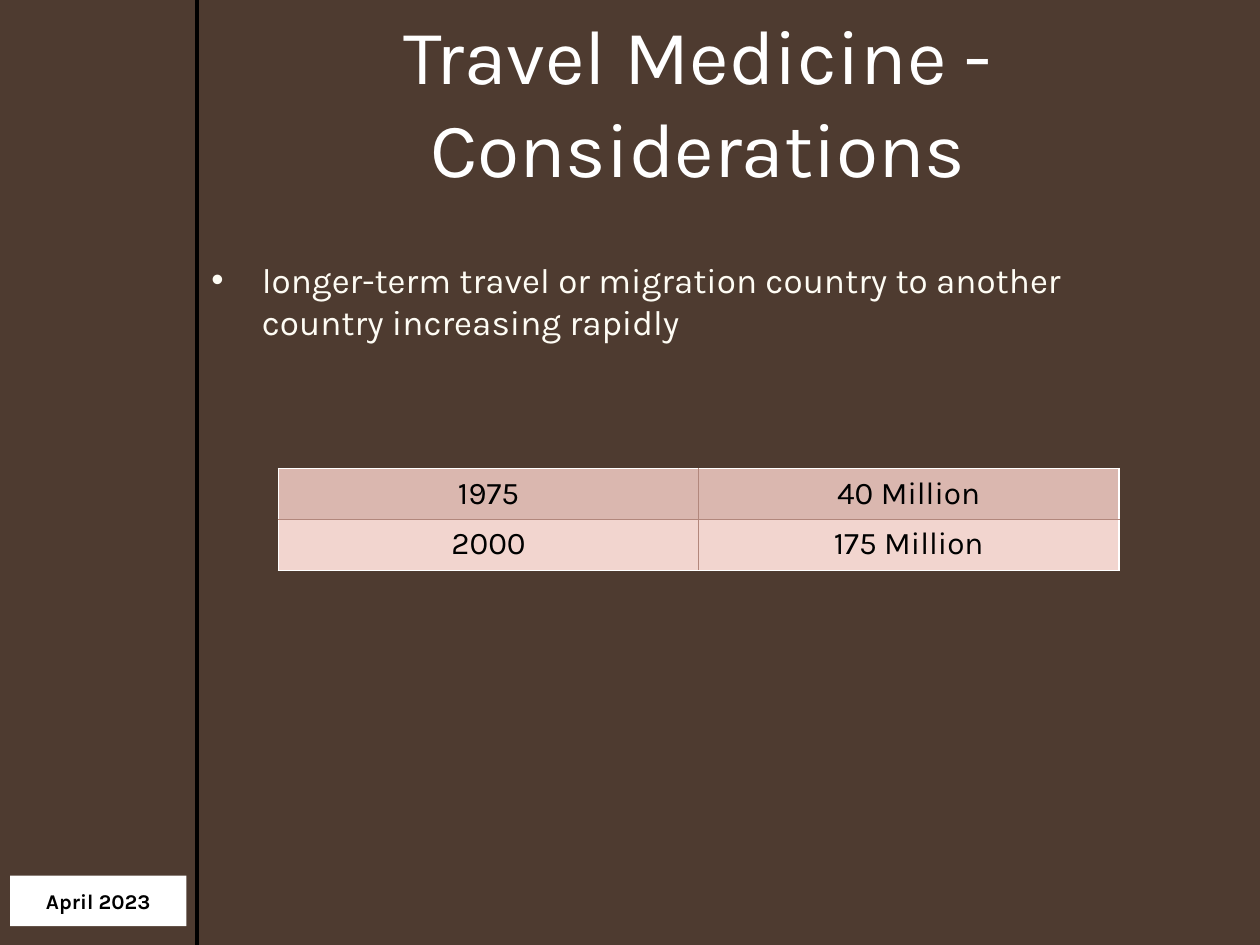
from lxml.etree import SubElement
from pptx import Presentation
from pptx.dml.color import RGBColor
from pptx.enum.shapes import MSO_CONNECTOR, MSO_SHAPE
from pptx.enum.text import MSO_ANCHOR, PP_ALIGN
from pptx.oxml.ns import qn
from pptx.util import Inches, Pt

FONT = "Karla"
WHITE, BLACK, ROSE = "FFFFFF", "000000", "B2877C"


def paint(target, color):
    """Give a fill or line fill one solid colour."""
    target.solid()
    target.fore_color.rgb = RGBColor.from_string(color)


def write(para, text, size, color, align=PP_ALIGN.CENTER, bold=False):
    """Add one styled run to a paragraph."""
    para.alignment = align
    run = para.add_run()
    run.text = text
    run.font.name = FONT
    run.font.size = Pt(size)
    run.font.bold = bold
    run.font.color.rgb = RGBColor.from_string(color)


def add_rule(slide, x, top, end):
    """Draw the upright rule beside the margin."""
    rule = slide.shapes.add_connector(
        MSO_CONNECTOR.STRAIGHT, Inches(x), Inches(top), Inches(x), Inches(end))
    paint(rule.line.fill, BLACK)
    rule.line.width = Pt(2.25)
    SubElement(rule._element.spPr, qn("a:effectLst"))


def add_body(slide, box):
    """Place the bulleted text."""
    frame = slide.shapes.add_textbox(*map(Inches, box)).text_frame
    frame.word_wrap = True
    para = frame.paragraphs[0]
    props = para._p.get_or_add_pPr()
    props.set("marL", str(Inches(0.4)))
    props.set("indent", str(Inches(-0.4)))
    SubElement(props, qn("a:buFont"), typeface="Arial")
    SubElement(props, qn("a:buChar"), char="•")
    para.space_after = Pt(6)
    write(para, "longer-term travel or migration country to another country "
          "increasing rapidly", 20, "FEFCF4", PP_ALIGN.LEFT)


def add_date(slide, box):
    """Place the date label."""
    label = slide.shapes.add_shape(MSO_SHAPE.RECTANGLE, *map(Inches, box))
    label.shadow.inherit = False
    paint(label.fill, WHITE)
    label.line.fill.background()
    frame = label.text_frame
    frame.vertical_anchor = MSO_ANCHOR.MIDDLE
    write(frame.paragraphs[0], "April 2023", 12, BLACK, bold=True)


def add_title(slide, box):
    """Place the slide title."""
    frame = slide.shapes.add_textbox(*map(Inches, box)).text_frame
    frame.word_wrap = True
    frame.vertical_anchor = MSO_ANCHOR.MIDDLE
    write(frame.paragraphs[0], "Travel Medicine - Considerations", 44, WHITE)


def add_edge(cell, side, outer):
    """Draw one cell border, white on the outside of the table."""
    width = Pt(1 if outer else 0.75)
    edge = SubElement(cell._tc.get_or_add_tcPr(), qn(f"a:ln{side}"), w=str(width))
    fill = SubElement(edge, qn("a:solidFill"))
    SubElement(fill, qn("a:srgbClr"), val=WHITE if outer else ROSE)


def add_figures(slide, box):
    """Place the table of years and numbers."""
    rows = [("1975", "40 Million"), ("2000", "175 Million")]
    fills = ["DAB7AF", "F2D5CF"]
    table = slide.shapes.add_table(2, 2, *map(Inches, box)).table
    table.first_row = table.horz_banding = False
    for i, (row, fill) in enumerate(zip(rows, fills)):
        for j, text in enumerate(row):
            cell = table.cell(i, j)
            for side, outer in zip("LRTB", (j == 0, j == 1, i == 0, i == 1)):
                add_edge(cell, side, outer)
            paint(cell.fill, fill)
            write(cell.text_frame.paragraphs[0], text, 18, BLACK)


def main():
    """Build and save the slide."""
    deck = Presentation()
    deck.slide_width, deck.slide_height = Inches(10), Inches(7.5)
    slide = deck.slides.add_slide(deck.slide_layouts[6])
    paint(slide.background.fill, "4E3B30")
    add_rule(slide, 1.56, 0, 7.5)
    add_body(slide, (1.58, 2, 7.92, 4.7))
    add_date(slide, (0.08, 6.95, 1.4, 0.4))
    add_title(slide, (1.58, 0.17, 7.92, 1.25))
    add_figures(slide, (2.21, 3.72, 6.67, 0.81))
    deck.save("out.pptx")


if __name__ == "__main__":
    main()
